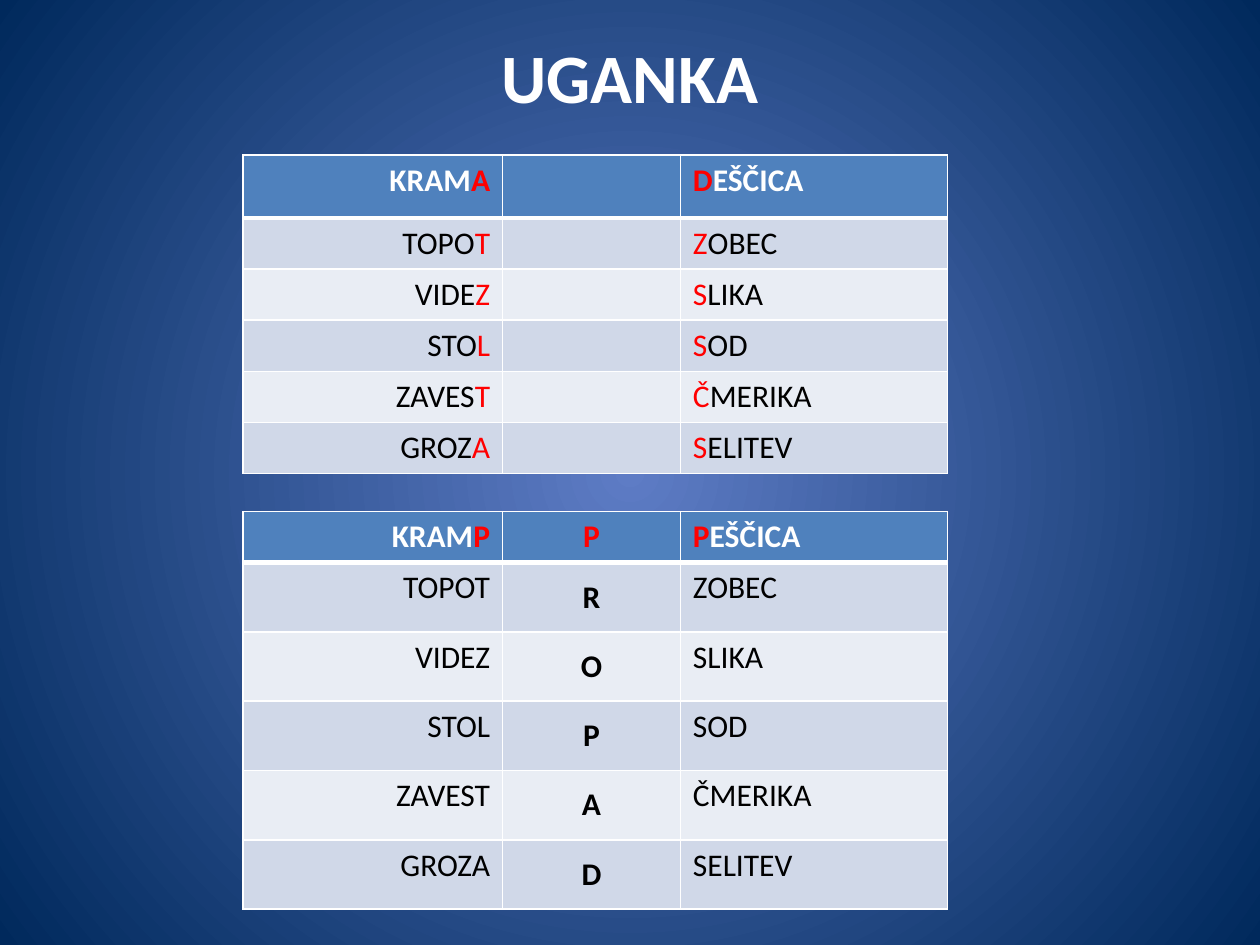
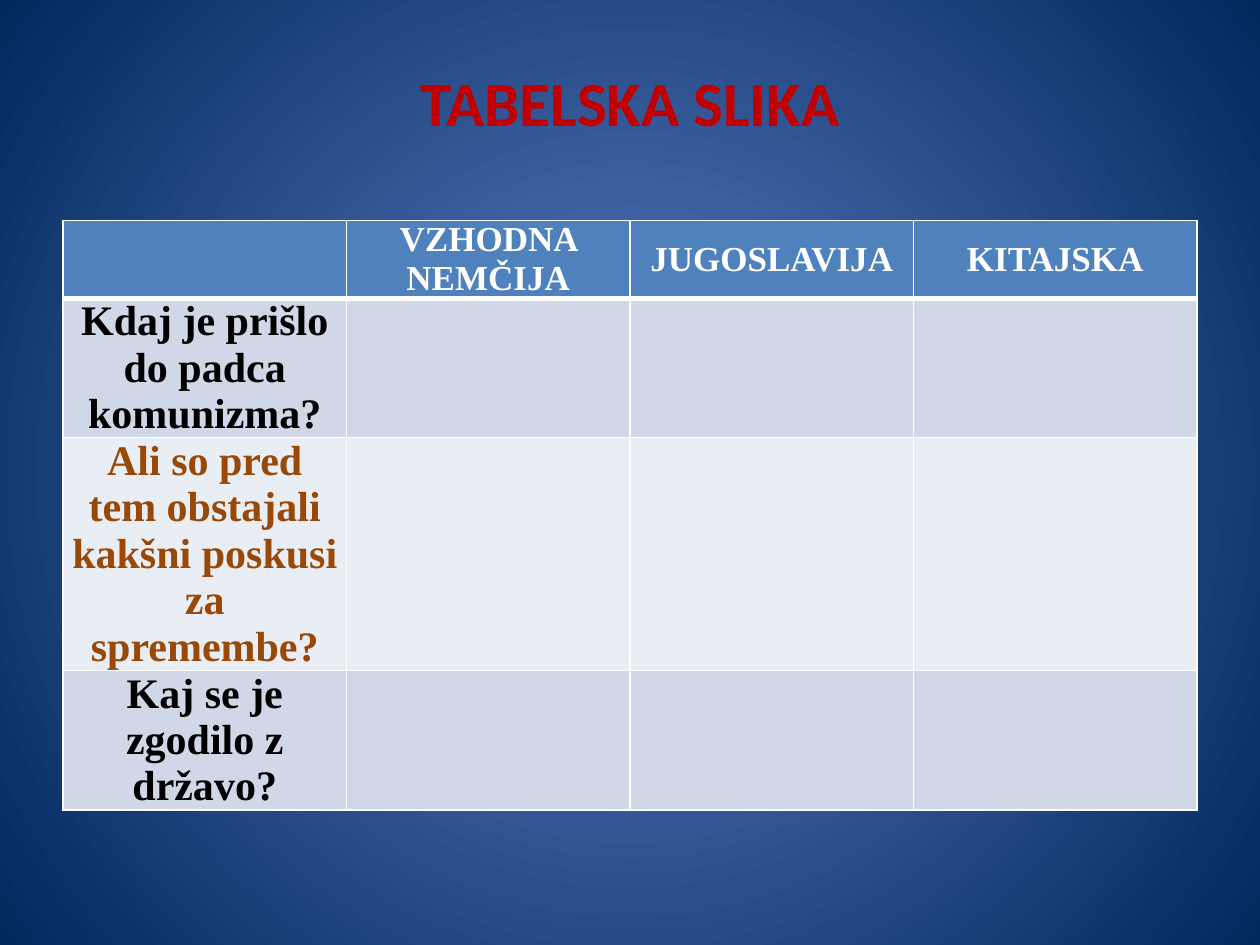
from lxml.etree import SubElement
from pptx import Presentation
from pptx.dml.color import RGBColor
from pptx.enum.text import MSO_ANCHOR as Anchor, PP_ALIGN as Align
from pptx.oxml.ns import qn
from pptx.util import Inches, Pt

WHITE, BLACK, RED = "FFFFFF", "000000", "FF0000"
DARK_RED, BROWN = "C00000", "984807"
HEADER_FILL, BAND_FILLS = "4F81BD", ("D0D8E8", "E9EDF4")
GLOW, NIGHT = "5E7CC5", "00295C"
SANS, SERIF = "Calibri", "Times New Roman"
TITLE_ONLY = 5


def rgb(value):
    return RGBColor.from_string(value)


def set_borders(cell, widths):
    """Draw white left, right, top and bottom borders of the given point widths."""
    properties = cell._tc.get_or_add_tcPr()
    for index, (side, width) in enumerate(zip("LRTB", widths)):
        line = SubElement(properties, qn(f"a:ln{side}"), w=str(Pt(width)))
        fill = SubElement(line, qn("a:solidFill"))
        SubElement(fill, qn("a:srgbClr"), val=WHITE)
        properties.insert(index, line)


class Deck:
    def __init__(self):
        self.presentation = Presentation()
        self.presentation.slide_width = Inches(10)
        self.presentation.slide_height = Inches(7.5)
        self.slide = None
        self.paint_background()

    def paint_background(self):
        """Give the master a gradient that glows from the centre."""
        master = self.presentation.slide_master
        fill = master.background.fill
        fill.gradient()
        for stop, color, position in zip(fill.gradient_stops, (GLOW, NIGHT), (0, 1)):
            stop.color.rgb = rgb(color)
            stop.position = position
        gradient = master.element.find(".//" + qn("p:bgPr") + "/" + qn("a:gradFill"))
        gradient.remove(gradient.find(qn("a:lin")))
        circle = SubElement(gradient, qn("a:path"), path="circle")
        SubElement(circle, qn("a:fillToRect"), l="50000", t="50000", r="50000", b="50000")

    def add_run(self, paragraph, text, size, color, font=SANS, bold=True):
        run = paragraph.add_run()
        run.text = text
        run.font.size = Pt(size)
        run.font.name = font
        run.font.bold = bold
        run.font.color.rgb = rgb(color)

    def add_slide(self, title, height, size, color):
        layout = self.presentation.slide_layouts[TITLE_ONLY]
        self.slide = self.presentation.slides.add_slide(layout)
        shape = self.slide.shapes.title
        shape.left, shape.top = Inches(0.5), Inches(0.3)
        shape.width, shape.height = Inches(9), Inches(height)
        shape.text_frame.vertical_anchor = Anchor.MIDDLE
        paragraph = shape.text_frame.paragraphs[0]
        paragraph.alignment = Align.CENTER
        self.add_run(paragraph, title, size, color)

    def add_table(self, left, top, widths, heights, rows, alignments,
                  sizes=(18, 18), font=SANS, tight=False):
        """Add a banded table; each cell is a list of (text, color) runs.

        The sizes are those of header and body; centred columns are bold."""
        table = self.slide.shapes.add_table(
            len(rows), len(widths), Inches(left), Inches(top),
            Inches(sum(widths)), Inches(sum(heights))).table
        for column, width in zip(table.columns, widths):
            column.width = Inches(width)
        for index, (row, height) in enumerate(zip(rows, heights)):
            table.rows[index].height = Inches(height)
            is_header = index == 0
            for cell, runs, alignment in zip(table.rows[index].cells, row, alignments):
                cell.fill.solid()
                cell.fill.fore_color.rgb = rgb(
                    HEADER_FILL if is_header else BAND_FILLS[(index - 1) % 2])
                set_borders(cell, (1, 1, 3 if index == 1 else 1, 3 if is_header else 1))
                centred = alignment == Align.CENTER
                if centred:
                    cell.vertical_anchor = Anchor.MIDDLE
                if tight:
                    cell.margin_left = cell.margin_right = Inches(0.07)
                    cell.margin_top = cell.margin_bottom = 0
                paragraph = cell.text_frame.paragraphs[0]
                paragraph.alignment = alignment
                for text, color in runs:
                    self.add_run(paragraph, text, sizes[0 if is_header else 1],
                                 color, font, is_header or centred)


def add_riddle(deck):
    deck.add_slide("UGANKA", 0.61, 39.6, WHITE)
    pairs = [("KRAMA", "DEŠČICA"), ("TOPOT", "ZOBEC"), ("VIDEZ", "SLIKA"),
             ("STOL", "SOD"), ("ZAVEST", "ČMERIKA"), ("GROZA", "SELITEV")]
    puzzle = []
    for index, (first, second) in enumerate(pairs):
        color = BLACK if index else WHITE
        puzzle.append([[(first[:-1], color), (first[-1], RED)], [],
                       [(second[0], RED), (second[1:], color)]])
    solution = [[[("KRAM", WHITE), ("P", RED)], [("P", RED)],
                 [("P", RED), ("EŠČICA", WHITE)]]]
    solution += [[[(first, BLACK)], [(letter, BLACK)], [(second, BLACK)]]
                 for (first, second), letter in zip(pairs[1:], "ROPAD")]

    widths = (2.06, 1.41, 2.12)
    alignments = (Align.RIGHT, Align.CENTER, Align.LEFT)
    deck.add_table(1.93, 1.23, widths, [0.5] + [0.4] * 5, puzzle, alignments)
    deck.add_table(1.93, 4.06, widths, [0.4] + [0.55] * 5, solution, alignments)


def add_comparison(deck):
    deck.add_slide("TABELSKA SLIKA", 1.01, 36, DARK_RED)
    countries = ["VZHODNA NEMČIJA", "JUGOSLAVIJA", "KITAJSKA"]
    questions = [("Kdaj je prišlo do padca komunizma?", BLACK),
                 ("Ali so pred tem obstajali kakšni poskusi za spremembe?", BROWN),
                 ("Kaj se je zgodilo z državo?", BLACK)]
    rows = [[[]] + [[(country, WHITE)] for country in countries]]
    rows += [[[question]] + [[] for _ in countries] for question in questions]
    deck.add_table(0.5, 1.75, [2.25] * 4, (0.61, 1.1, 1.85, 1.1), rows,
                   [Align.CENTER] * 4, sizes=(20, 24), font=SERIF, tight=True)


def main():
    deck = Deck()
    add_riddle(deck)
    add_comparison(deck)
    deck.presentation.save("out.pptx")


if __name__ == "__main__":
    main()
